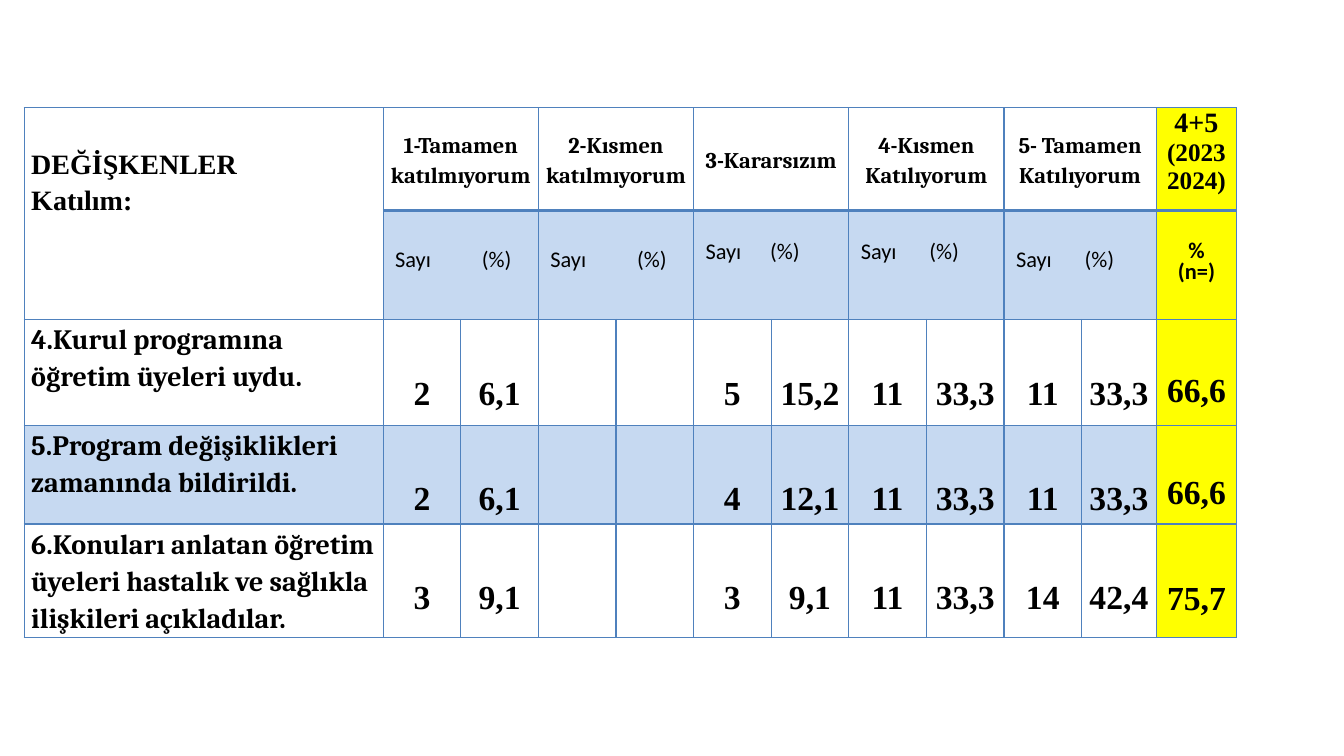
from dataclasses import dataclass

from lxml import etree
from pptx import Presentation
from pptx.dml.color import RGBColor
from pptx.enum.text import MSO_ANCHOR, PP_ALIGN
from pptx.oxml.ns import qn
from pptx.util import Inches, Pt

LEFT, CENTER = PP_ALIGN.LEFT, PP_ALIGN.CENTER
TOP, MIDDLE = MSO_ANCHOR.TOP, MSO_ANCHOR.MIDDLE


@dataclass(frozen=True)
class Theme:
    border: str = "4F81BD"
    band: str = "C6D9F1"
    highlight: str = "FFFF00"
    text: str = "000000"
    serif: str = "Times New Roman"
    label: str = "Cambria"
    sans: str = "Calibri"
    small: int = 16
    medium: int = 18
    large: int = 20
    figure: int = 24
    thin: float = 1
    thick: float = 2.25


class SlideBuilder:
    def __init__(self, slide, theme):
        self.slide = slide
        self.theme = theme

    def table(self, left, top, widths, heights):
        frame = self.slide.shapes.add_table(
            len(heights), len(widths), Inches(left), Inches(top),
            Inches(sum(widths)), Inches(sum(heights)))
        table = frame.table
        table.first_row = table.horz_banding = False
        for column, width in zip(table.columns, widths):
            column.width = Inches(width)
        for row, height in zip(table.rows, heights):
            row.height = Inches(height)
        return table

    def cell(self, cell, fill=None, top_line=None, bottom_line=None):
        if fill:
            cell.fill.solid()
            cell.fill.fore_color.rgb = RGBColor.from_string(fill)
        else:
            cell.fill.background()
        thin = self.theme.thin
        sides = {"a:lnL": thin, "a:lnR": thin,
                 "a:lnT": top_line or thin, "a:lnB": bottom_line or thin}
        properties = cell._tc.get_or_add_tcPr()
        for index, (tag, width) in enumerate(sides.items()):
            line = etree.Element(qn(tag), w=str(Pt(width)))
            solid = etree.SubElement(line, qn("a:solidFill"))
            etree.SubElement(solid, qn("a:srgbClr"), val=self.theme.border)
            properties.insert(index, line)

    def text(self, cell, lines, font, sizes, align=CENTER, anchor=MIDDLE,
             spacing=None, bold=True, left=0.07, top=0, bottom=0):
        cell.vertical_anchor = anchor
        cell.margin_left, cell.margin_right = Inches(left), Inches(0.07)
        cell.margin_top, cell.margin_bottom = Inches(top), Inches(bottom)
        frame = cell.text_frame
        for index, (line, size) in enumerate(zip(lines, sizes)):
            para = frame.add_paragraph() if index else frame.paragraphs[0]
            para.text = line
            para.alignment = align
            para.line_spacing = spacing
            para.font.name = font
            para.font.size = Pt(size)
            para.font.bold = bold
            para.font.color.rgb = RGBColor.from_string(self.theme.text)

    def tab_stop(self, cell, position):
        properties = cell.text_frame.paragraphs[0]._p.get_or_add_pPr()
        stops = etree.SubElement(properties, qn("a:tabLst"))
        etree.SubElement(stops, qn("a:tab"), pos=str(Inches(position)), algn="l")
        default = properties.find(qn("a:defRPr"))
        if default is not None:
            default.addprevious(stops)


ANSWERS = [
    ("1-Tamamen katılmıyorum", 0.86, 0),
    ("2-Kısmen katılmıyorum", 0.86, 0),
    ("3-Kararsızım", 0.64, 0.16),
    ("4-Kısmen Katılıyorum", 0.68, 0.16),
    ("5- Tamamen Katılıyorum", 0.68, 0),
]
STATEMENTS = [
    ("4.Kurul programına öğretim üyeleri uydu.",
     ["2", "6,1", "", "", "5", "15,2", "11", "33,3", "11", "33,3"], "66,6"),
    ("5.Program değişiklikleri zamanında bildirildi.",
     ["2", "6,1", "", "", "4", "12,1", "11", "33,3", "11", "33,3"], "66,6"),
    ("6.Konuları anlatan öğretim üyeleri hastalık ve sağlıkla ilişkileri açıkladılar.",
     ["3", "9,1", "", "", "3", "9,1", "11", "33,3", "14", "42,4"], "75,7"),
]


def main():
    deck = Presentation()
    deck.slide_width, deck.slide_height = Inches(13.33), Inches(7.5)
    theme = Theme()
    builder = SlideBuilder(deck.slides.add_slide(deck.slide_layouts[6]), theme)
    table = builder.table(0.24, 1.07, [3.56] + [0.77] * 9 + [0.74, 0.8],
                          [1.02, 1.06, 1.05, 0.98, 1.13])
    last = len(table.columns) - 1

    for row in range(len(table.rows)):
        for column in range(last + 1):
            shaded = row == 3 or (row == 1 and column > 0)
            fill = theme.highlight if column == last else theme.band if shaded else None
            builder.cell(table.cell(row, column), fill,
                         theme.thick if row == 1 and column else None,
                         theme.thick if row == 0 and column else None)

    heading = table.cell(0, 0)
    heading.merge(table.cell(1, 0))
    builder.text(heading, ["DEĞİŞKENLER", "Katılım:"], theme.serif,
                 [theme.large] * 2, LEFT, TOP, 1.15, top=0.37)

    for index, (answer, tab, bottom) in enumerate(ANSWERS):
        column = 1 + 2 * index
        title, units = table.cell(0, column), table.cell(1, column)
        for cell, row in ((title, 0), (units, 1)):
            cell.merge(table.cell(row, column + 1))
        builder.text(title, [answer], theme.label, [theme.small], spacing=1.15)
        builder.text(units, ["Sayı\t(%)"], theme.sans, [theme.small], LEFT,
                     spacing=Pt(12), bold=False, left=0.12, bottom=bottom)
        builder.tab_stop(units, tab)

    builder.text(table.cell(0, last), ["4+5", "(2023\v2024)"], theme.serif,
                 [theme.large, theme.medium], anchor=TOP)
    builder.text(table.cell(1, last), ["%", "(n=)"], theme.sans,
                 [theme.small] * 2, spacing=Pt(15))

    for row, (statement, figures, total) in enumerate(STATEMENTS, start=2):
        builder.text(table.cell(row, 0), [statement], theme.label,
                     [theme.large], LEFT, TOP, 1.15)
        for column, figure in enumerate(figures, start=1):
            if figure:
                builder.text(table.cell(row, column), [figure], theme.serif,
                             [theme.figure], anchor=TOP, spacing=2.5)
        builder.text(table.cell(row, last), [total], theme.serif,
                     [theme.figure], spacing=2.0)

    deck.save("out.pptx")


if __name__ == "__main__":
    main()
